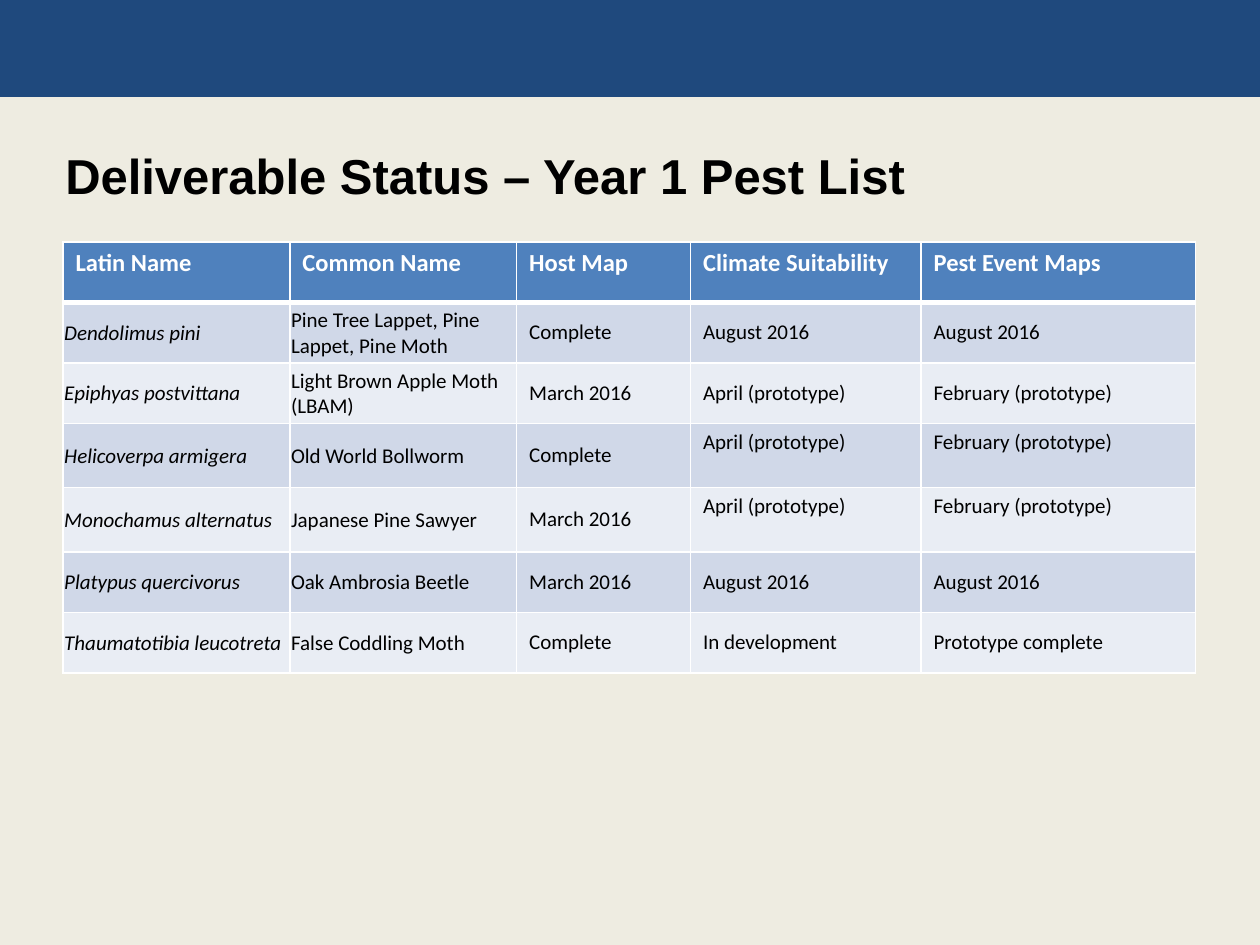
from lxml.etree import SubElement
from pptx import Presentation
from pptx.dml.color import RGBColor
from pptx.enum.shapes import MSO_SHAPE as Shape
from pptx.enum.text import MSO_ANCHOR as Anchor
from pptx.oxml.ns import qn
from pptx.util import Inches, Pt


def color(hex_string):
    return RGBColor.from_string(hex_string)


class SlideBuilder:
    NAVY, BLUE, CREAM = "1F497D", "4F81BD", "EEECE1"
    BLACK, WHITE = "000000", "FFFFFF"
    BANDS = ("D0D8E8", "E9EDF4")
    TITLE_FONT, TABLE_FONT = "Arial", "Calibri"

    def __init__(self, presentation):
        self.slide = presentation.slides.add_slide(presentation.slide_layouts[6])
        background = self.slide.background.fill
        background.solid()
        background.fore_color.rgb = color(self.CREAM)

    def style(self, paragraph, font_name, size, text_color, bold=False, italic=False):
        font = paragraph.font
        font.name, font.size = font_name, Pt(size)
        font.bold, font.italic = bold, italic
        font.color.rgb = color(text_color)

    def bar(self, left, top, width, height):
        shape = self.slide.shapes.add_shape(
            Shape.RECTANGLE, Inches(left), Inches(top), Inches(width), Inches(height))
        shape.shadow.inherit = False
        shape.fill.solid()
        shape.fill.fore_color.rgb = color(self.NAVY)
        shape.line.fill.background()

    def title(self, text, left, top, width, height):
        box = self.slide.shapes.add_textbox(
            Inches(left), Inches(top), Inches(width), Inches(height))
        frame = box.text_frame
        frame.word_wrap = True
        frame.vertical_anchor = Anchor.MIDDLE
        paragraph = frame.paragraphs[0]
        paragraph.text = text
        self.style(paragraph, self.TITLE_FONT, 28, self.BLACK, bold=True)

    def borders(self, cell, top=1, bottom=1):
        properties = cell._tc.get_or_add_tcPr()
        for side, width in (("L", 1), ("R", 1), ("T", top), ("B", bottom)):
            line = SubElement(properties, qn(f"a:ln{side}"), w=str(Pt(width)))
            fill = SubElement(line, qn("a:solidFill"))
            SubElement(fill, qn("a:srgbClr"), val=self.WHITE)

    def cell(self, cell, text, row, column, top_aligned):
        is_header = row == 0
        self.borders(cell, top=3 if row == 1 else 1, bottom=3 if is_header else 1)
        cell.fill.solid()
        cell.fill.fore_color.rgb = color(
            self.BLUE if is_header else self.BANDS[(row - 1) % 2])
        cell.vertical_anchor = Anchor.TOP if is_header or top_aligned else Anchor.MIDDLE
        # Name columns have almost no inner margin
        if not is_header and column < 2:
            cell.margin_left = cell.margin_top = cell.margin_right = Inches(0.01)
            cell.margin_bottom = 0
        paragraph = cell.text_frame.paragraphs[0]
        paragraph.text = text
        if is_header:
            self.style(paragraph, self.TABLE_FONT, 14, self.WHITE, bold=True)
        else:
            self.style(paragraph, self.TABLE_FONT, 12, self.BLACK, italic=column == 0)

    def table(self, rows, left, top, widths, heights, tall_rows):
        table = self.slide.shapes.add_table(
            len(rows), len(widths), Inches(left), Inches(top),
            Inches(sum(widths)), Inches(sum(heights))).table
        for column, width in zip(table.columns, widths):
            column.width = Inches(width)
        for table_row, height in zip(table.rows, heights):
            table_row.height = Inches(height)
        for row, texts in enumerate(rows):
            for column, text in enumerate(texts):
                top_aligned = row in tall_rows and column >= 3
                self.cell(table.cell(row, column), text, row, column, top_aligned)


PESTS = [
    ("Latin Name", "Common Name", "Host Map", "Climate Suitability", "Pest Event Maps"),
    ("Dendolimus pini", "Pine Tree Lappet, Pine Lappet, Pine Moth",
     "Complete", "August 2016", "August 2016"),
    ("Epiphyas postvittana", "Light Brown Apple Moth (LBAM)",
     "March 2016", "April (prototype)", "February (prototype)"),
    ("Helicoverpa armigera", "Old World Bollworm",
     "Complete", "April (prototype)", "February (prototype)"),
    ("Monochamus alternatus", "Japanese Pine Sawyer",
     "March 2016", "April (prototype)", "February (prototype)"),
    ("Platypus quercivorus", "Oak Ambrosia Beetle",
     "March 2016", "August 2016", "August 2016"),
    ("Thaumatotibia leucotreta", "False Coddling Moth",
     "Complete", "In development", "Prototype complete"),
]
TALL_ROWS = (3, 4)


def main():
    presentation = Presentation()
    presentation.slide_width, presentation.slide_height = Inches(10), Inches(7.5)
    builder = SlideBuilder(presentation)

    # Header band and title
    builder.bar(0, 0, 10, 0.77)
    builder.title("Deliverable Status – Year 1 Pest List", 0.42, 1, 9, 0.78)

    # Pest status table
    heights = [0.51 if row in TALL_ROWS else 0.48 for row in range(len(PESTS))]
    builder.table(PESTS, 0.5, 1.92, [1.8, 1.8, 1.38, 1.83, 2.18], heights, TALL_ROWS)

    presentation.save("out.pptx")


if __name__ == "__main__":
    main()
